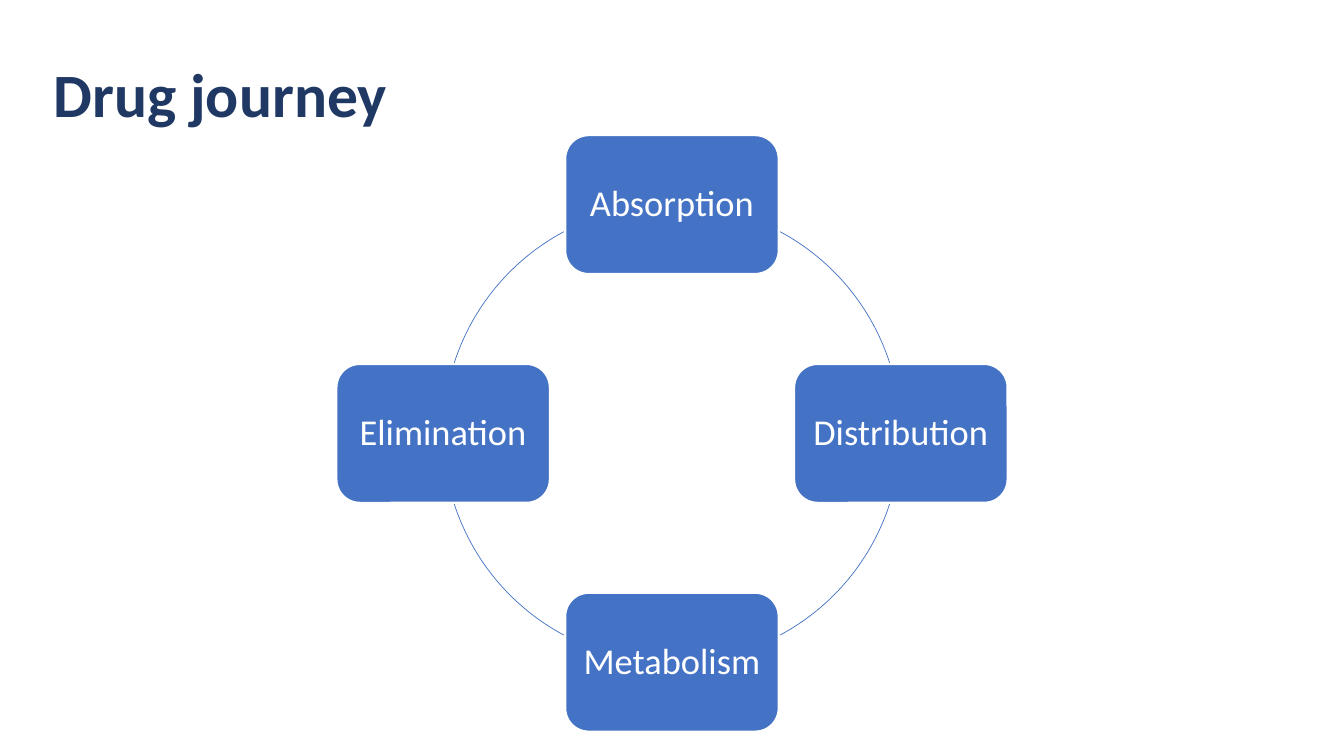
"""Build the drug journey slide: four stages on a ring."""
from dataclasses import dataclass
from math import cos, radians, sin

from pptx import Presentation
from pptx.dml.color import RGBColor as RGB
from pptx.enum.shapes import MSO_SHAPE as SHAPE
from pptx.enum.text import MSO_ANCHOR as ANCHOR, MSO_AUTO_SIZE as FIT, PP_ALIGN as ALIGN
from pptx.util import Inches, Pt

TITLE = "Drug journey"
STAGES = ["Absorption", "Distribution", "Metabolism", "Elimination"]


@dataclass(frozen=True)
class Theme:
    font: str = "Calibri"
    navy: str = "203864"
    blue: str = "4472C4"
    white: str = "FFFFFF"
    title: int = 44
    stage: int = 26


T = Theme()
WIDTH, HEIGHT = 13.33, 7.5
CX, CY, RADIUS = WIDTH / 2, 4.3, 2.27
BOX_W, BOX_H = 2.11, 1.37
STEP = 360 / len(STAGES)
ARC_GAPS = [(28.2, 18), (18, 28.2)]


def write(tf, text, size, color, bold=False, align=ALIGN.LEFT):
    tf.auto_size = FIT.NONE
    tf.vertical_anchor = ANCHOR.MIDDLE
    p = tf.paragraphs[0]
    p.alignment = align
    p.line_spacing = 0.9
    r = p.add_run()
    r.text = text
    r.font.name, r.font.size, r.font.bold = T.font, Pt(size), bold
    r.font.color.rgb = RGB.from_string(color)


def add_centred(s, kind, x, y, w, h, line, weight, fill=None):
    sp = s.shapes.add_shape(kind, *map(Inches, (x - w / 2, y - h / 2, w, h)))
    sp.shadow.inherit = False
    if fill:
        sp.fill.solid()
        sp.fill.fore_color.rgb = RGB.from_string(fill)
    else:
        sp.fill.background()
    sp.line.color.rgb = RGB.from_string(line)
    sp.line.width = Pt(weight)
    return sp


def add_stage(s, text, angle):
    x = CX + RADIUS * cos(radians(angle))
    y = CY + RADIUS * sin(radians(angle))
    sp = add_centred(s, SHAPE.ROUNDED_RECTANGLE, x, y, BOX_W, BOX_H, T.white, 1, T.blue)
    tf = sp.text_frame
    tf.word_wrap = False
    write(tf, text, T.stage, T.white, align=ALIGN.CENTER)


def add_arc(s, angle, gaps):
    sp = add_centred(s, SHAPE.ARC, CX, CY, 2 * RADIUS, 2 * RADIUS, T.blue, 0.5)
    ends = angle + gaps[0], angle + STEP - gaps[1]
    for i, end in enumerate(ends):
        sp.adjustments[i] = end % 360 * 0.6


def main():
    prs = Presentation()
    prs.slide_width, prs.slide_height = Inches(WIDTH), Inches(HEIGHT)
    s = prs.slides.add_slide(prs.slide_layouts[5])
    title = s.shapes.title
    title.left, title.top, title.width, title.height = map(Inches, (0.43, 0.24, 11.5, 1.45))
    write(title.text_frame, TITLE, T.title, T.navy, bold=True)
    for i, stage in enumerate(STAGES):
        angle = i * STEP - 90
        add_stage(s, stage, angle)
        add_arc(s, angle, ARC_GAPS[i % 2])
    prs.save("out.pptx")


if __name__ == "__main__":
    main()
